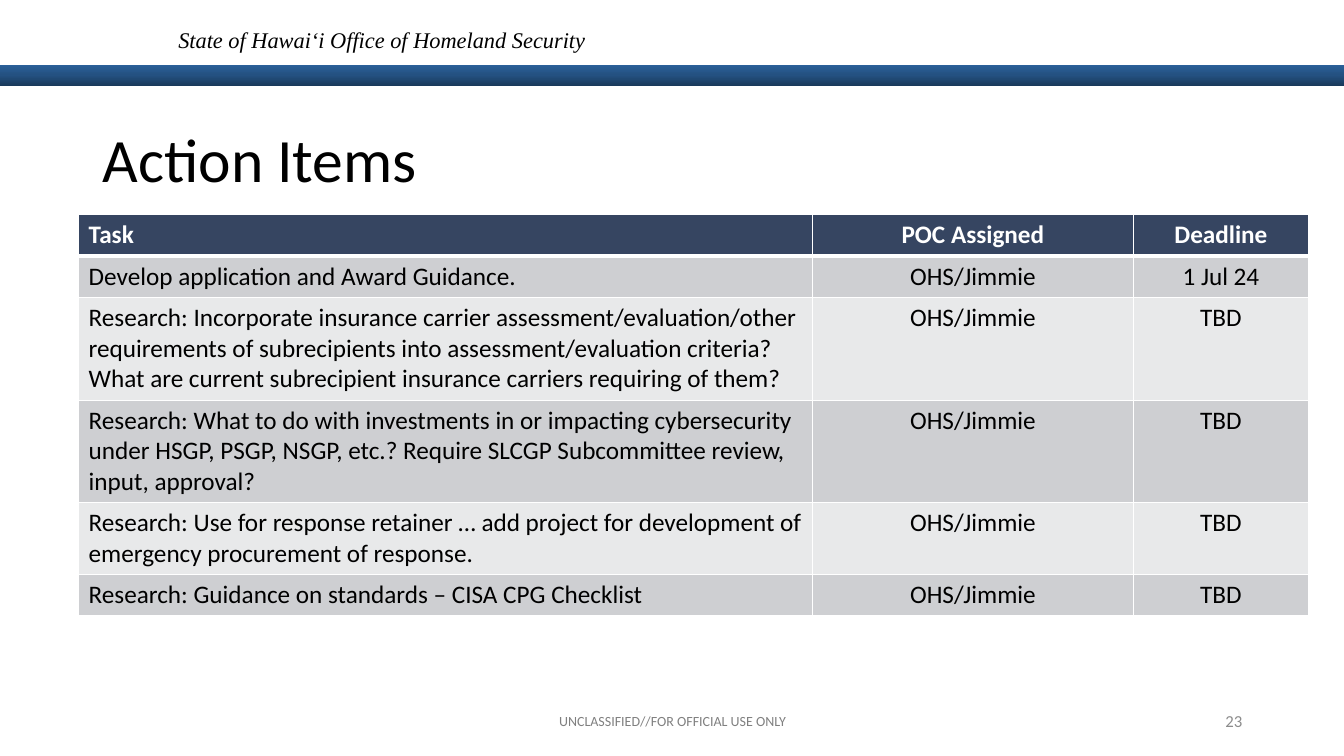
from copy import deepcopy
from dataclasses import dataclass

from lxml import etree
from pptx import Presentation
from pptx.dml.color import RGBColor
from pptx.enum.shapes import MSO_SHAPE
from pptx.enum.text import MSO_ANCHOR, PP_ALIGN
from pptx.oxml.ns import qn
from pptx.util import Emu, Pt

LEFT, CENTER, RIGHT = PP_ALIGN.LEFT, PP_ALIGN.CENTER, PP_ALIGN.RIGHT
TOP, MIDDLE = MSO_ANCHOR.TOP, MSO_ANCHOR.MIDDLE
RECT = MSO_SHAPE.RECTANGLE

EMU_PER_PX = 9144
COLORS = {
    "black": "000000", "white": "FFFFFF", "header": "364561",
    "band_dark": "CECFD2", "band_light": "E8E9EA",
    "footer": "808080", "number": "8C8C8C",
    "bar_bottom": "19395B", "bar_middle": "245181", "bar_top": "2B6099",
}


@dataclass(frozen=True)
class Label:
    text: str
    box: tuple[int, int, int, int]
    size: int
    color: str = "black"
    font: str = "Calibri"
    italic: bool = False
    align: PP_ALIGN = LEFT
    anchor: MSO_ANCHOR = TOP
    spacing: float = 1.0


@dataclass(frozen=True)
class Task:
    text: str
    height: int
    deadline: str = "TBD"
    poc: str = "OHS/Jimmie"


LABELS = [
    Label("State of Hawai‘i Office of Homeland Security", (167, 21, 796, 37), 16,
          font="Times New Roman", italic=True),
    Label("Action Items", (92, 123, 1150, 62), 44, spacing=0.9),
    Label("23", (942, 695, 300, 40), 12, "number", align=RIGHT, anchor=MIDDLE),
    Label("UNCLASSIFIED//FOR OFFICIAL USE ONLY", (442, 695, 450, 40), 10, "footer",
          align=CENTER, anchor=MIDDLE),
]
ROWS = [
    Task("Task", 41, "Deadline", "POC Assigned"),
    Task("Develop application and Award Guidance.", 41, "1 Jul 24"),
    Task("Research: Incorporate insurance carrier assessment/evaluation/other "
         "requirements of subrecipients into assessment/evaluation criteria? "
         "What are current subrecipient insurance carriers requiring of them?", 102),
    Task("Research: What to do with investments in or impacting cybersecurity "
         "under HSGP, PSGP, NSGP, etc.? Require SLCGP Subcommittee review, "
         "input, approval?", 102),
    Task("Research: Use for response retainer … add project for development of "
         "emergency procurement of response.", 71),
    Task("Research: Guidance on standards – CISA CPG Checklist", 41),
]
COLUMN_WIDTHS = [728, 318, 174]


def px(n: int) -> Emu:
    return Emu(n * EMU_PER_PX)


def rgb(name: str) -> RGBColor:
    return RGBColor.from_string(COLORS[name])


def add_run(p, text: str, size: int, color: str, font: str = "Calibri",
            bold: bool = False, italic: bool = False) -> None:
    r = p.add_run()
    r.text = text
    r.font.name, r.font.size = font, Pt(size)
    r.font.bold, r.font.italic = bold, italic
    r.font.color.rgb = rgb(color)


def add_label(s, label: Label) -> None:
    tf = s.shapes.add_textbox(*map(px, label.box)).text_frame
    tf.word_wrap = True
    tf.vertical_anchor = label.anchor
    p = tf.paragraphs[0]
    p.alignment, p.line_spacing = label.align, label.spacing
    add_run(p, label.text, label.size, label.color, label.font, italic=label.italic)


def add_header_bar(s) -> None:
    sp = s.shapes.add_shape(RECT, px(0), px(64), px(1333), px(21))
    sp.shadow.inherit = False
    sp.line.fill.background()
    sp.fill.gradient()
    sp.fill.gradient_angle = 90
    stop_list = sp.fill._fill._gradFill.find(qn("a:gsLst"))
    stop_list.insert(1, deepcopy(stop_list[0]))
    names = ("bar_bottom", "bar_middle", "bar_top")
    for stop, position, name in zip(sp.fill.gradient_stops, (0, 0.5, 1), names):
        stop.position = position
        stop.color.rgb = rgb(name)


def set_borders(cell, top: int, bottom: int) -> None:
    """Draw white cell borders, with widths in points."""
    tc_pr = cell._tc.get_or_add_tcPr()
    for side, width in (("L", 1), ("R", 1), ("T", top), ("B", bottom)):
        ln = etree.SubElement(tc_pr, qn(f"a:ln{side}"), w=str(Pt(width)))
        fill = etree.SubElement(ln, qn("a:solidFill"))
        etree.SubElement(fill, qn("a:srgbClr"), val=COLORS["white"])


def add_task_table(s) -> None:
    table = s.shapes.add_table(
        len(ROWS), len(COLUMN_WIDTHS), px(78), px(213),
        px(sum(COLUMN_WIDTHS)), px(sum(row.height for row in ROWS))).table
    for column, width in zip(table.columns, COLUMN_WIDTHS):
        column.width = px(width)
    for i, row in enumerate(ROWS):
        table.rows[i].height = px(row.height)
        header = i == 0
        fill = "header" if header else ("band_light", "band_dark")[i % 2]
        for j, text in enumerate((row.text, row.poc, row.deadline)):
            cell = table.cell(i, j)
            set_borders(cell, top=3 if i == 1 else 1, bottom=3 if header else 1)
            cell.fill.solid()
            cell.fill.fore_color.rgb = rgb(fill)
            p = cell.text_frame.paragraphs[0]
            p.alignment = CENTER if j else LEFT
            add_run(p, text, 18, "white" if header else "black", bold=header)


def main() -> None:
    prs = Presentation()
    prs.slide_width, prs.slide_height = px(1333), px(750)
    s = prs.slides.add_slide(prs.slide_layouts[6])
    add_header_bar(s)
    for label in LABELS:
        add_label(s, label)
    add_task_table(s)
    prs.save("out.pptx")


if __name__ == "__main__":
    main()
